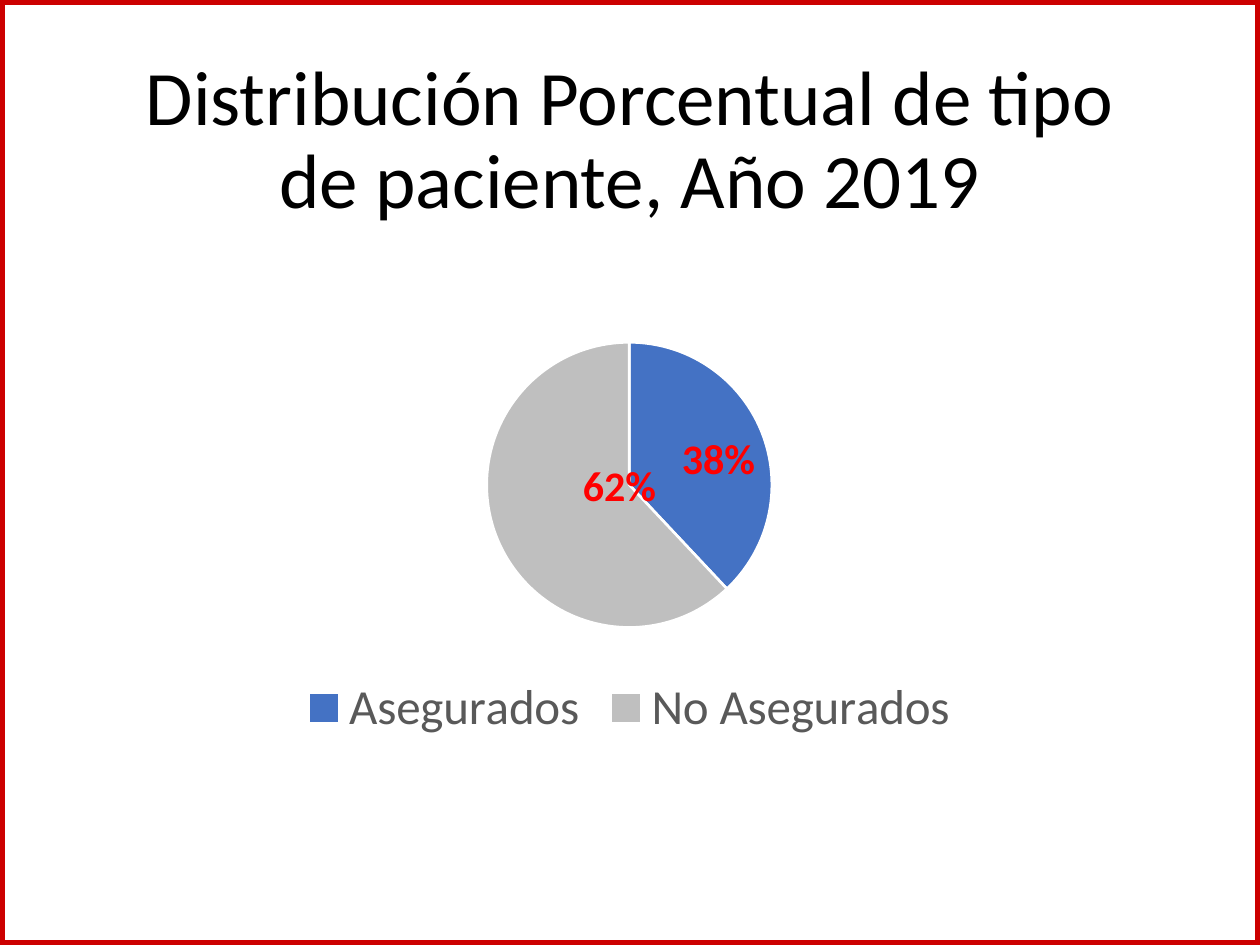
from lxml.etree import SubElement
from pptx import Presentation
from pptx.chart.data import CategoryChartData as Data
from pptx.dml.color import RGBColor as Rgb
from pptx.enum.chart import XL_CHART_TYPE as Kind, XL_LABEL_POSITION as Spot, XL_LEGEND_POSITION as Side
from pptx.enum.shapes import MSO_SHAPE as Form
from pptx.enum.text import MSO_ANCHOR as Anchor, PP_ALIGN as Align
from pptx.oxml.ns import qn
from pptx.util import Pt

TITLE = "Distribución Porcentual de tipo de paciente, Año 2019"
SHARES = [("Asegurados", 0.38, "blue"), ("No Asegurados", 0.62, "silver")]
COLORS = {"blue": "4472C4", "silver": "BFBFBF", "red": "FF0000", "frame": "CC0000",
          "gray": "595959", "white": "FFFFFF", "black": "000000"}
WIDE, HIGH = 720, 540
PLOT = {"x": 0.32, "y": 0.06, "w": 0.36, "h": 0.67}
SHIFT = {"x": 0.1, "y": -0.05}


def tone(name):
    """Return the named colour."""
    return Rgb.from_string(COLORS[name])


def style(font, size, color, bold=False):
    """Set the face, size, colour and weight of a font."""
    font.name, font.size, font.bold = "Calibri", Pt(size), bold
    font.color.rgb = tone(color)


def layout(modes, sizes):
    """Build a manual chart layout."""
    root = SubElement(modes, qn("c:layout"))
    box = SubElement(root, qn("c:manualLayout"))
    if "w" in sizes:
        SubElement(box, qn("c:layoutTarget")).set("val", "inner")
        for key in "xy":
            SubElement(box, qn(f"c:{key}Mode")).set("val", "edge")
    for key, val in sizes.items():
        SubElement(box, qn(f"c:{key}")).set("val", str(val))
    return root


def add_frame(slide):
    """Draw the red border behind everything."""
    frame = slide.shapes.add_shape(Form.RECTANGLE, 0, 0, Pt(WIDE), Pt(HIGH))
    frame.shadow.inherit = False
    frame.fill.solid()
    frame.fill.fore_color.rgb = tone("white")
    frame.line.color.rgb = tone("frame")
    frame.line.width = Pt(6)
    slide.shapes._spTree.insert(2, frame._element)


def add_title(slide):
    """Fill and place the title."""
    title = slide.shapes.title
    title.left, title.top, title.width, title.height = map(Pt, (49.5, 28.75, 621, 104.4))
    text = title.text_frame
    text.text = TITLE
    text.word_wrap = True
    text.vertical_anchor = Anchor.MIDDLE
    para = text.paragraphs[0]
    para.alignment, para.line_spacing = Align.CENTER, 0.9
    style(para.runs[0].font, 44, "black")


def add_pie(slide):
    """Add the pie with its legend and labels."""
    data = Data(number_format="0%")
    data.categories = [name for name, _, _ in SHARES]
    data.add_series("Series 1", [share for _, share, _ in SHARES])
    chart = slide.shapes.add_chart(Kind.PIE, *map(Pt, (133.2, 179.3, 452.9, 247.7)), data).chart
    style(chart.font, 10, "black")
    chart.has_title = False
    chart.has_legend = True
    chart.legend.position = Side.BOTTOM
    chart.legend.include_in_layout = False
    style(chart.legend.font, 28, "gray")

    area = chart._chartSpace.chart.plotArea
    for old in area.findall(qn("c:layout")):
        area.remove(old)
    area.insert(0, layout(area, PLOT))

    plot = chart.plots[0]
    plot.vary_by_categories = True
    pie = plot.series[0]
    labels = pie.data_labels
    labels.show_value = True
    labels.show_percentage = False
    labels.number_format, labels.number_format_is_linked = "0%", False
    labels.position = Spot.INSIDE_END
    style(labels.font, 24, "red", True)
    for i, (_, _, color) in enumerate(SHARES):
        form = pie.points[i].format
        form.fill.solid()
        form.fill.fore_color.rgb = tone(color)
        form.line.color.rgb = tone("white")
        form.line.width = Pt(1.5)

    label = pie.points[1].data_label
    style(label.font, 24, "red", True)
    label.position = Spot.INSIDE_END
    node = labels._element.find(qn("c:dLbl"))
    node.insert(1, layout(node, SHIFT))


def main():
    """Build and save the slide."""
    deck = Presentation()
    deck.slide_width, deck.slide_height = Pt(WIDE), Pt(HIGH)
    slide = deck.slides.add_slide(deck.slide_layouts[5])
    add_frame(slide)
    add_title(slide)
    add_pie(slide)
    deck.save("out.pptx")


if __name__ == "__main__":
    main()
